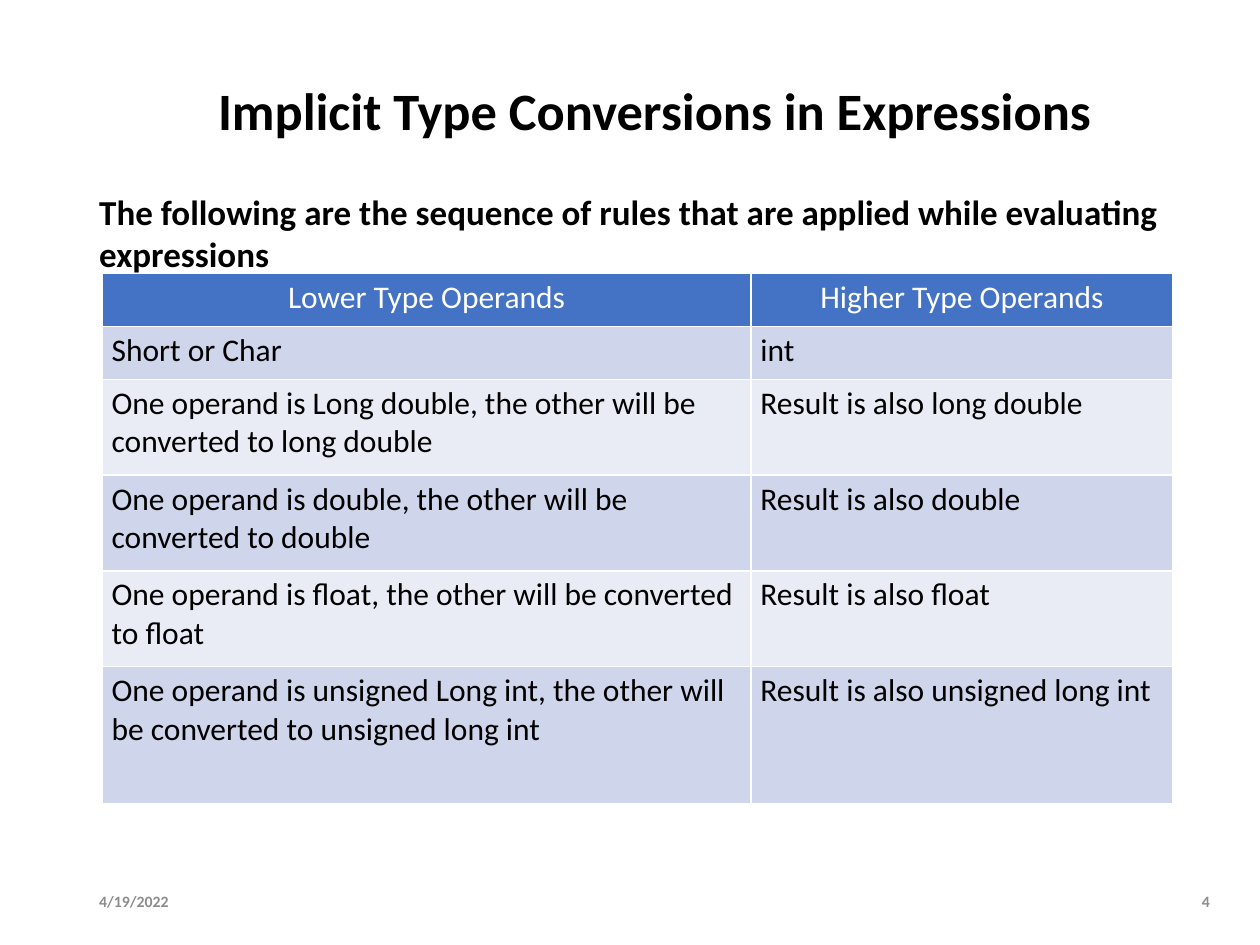
from pptx import Presentation
from pptx.dml.color import RGBColor
from pptx.enum.text import MSO_ANCHOR, MSO_AUTO_SIZE, PP_ALIGN
from pptx.util import Cm, Pt

COLORS = {
    "text": "000000",
    "muted": "8C8C8C",
    "white": "FFFFFF",
    "header": "4472C4",
    "odd_row": "CFD5EA",
    "even_row": "E9EBF5",
}
HEADINGS = ("Lower Type Operands", "Higher Type Operands")
RULES = [
    ("Short or Char", "int"),
    ("One operand is Long double, the other will be converted to long double",
     "Result is also long double"),
    ("One operand is double, the other will be converted to double",
     "Result is also double"),
    ("One operand is float, the other will be converted to float",
     "Result is also float"),
    ("One operand is unsigned Long int, the other will be converted to unsigned long int",
     "Result is also unsigned long int"),
]
COLUMN_WIDTHS = (13.08, 8.51)
ROW_HEIGHTS = (1.07, 1.07, 1.93, 1.93, 1.93, 2.77)


class SlideBuilder:
    """Holds the text style and the current slide, and adds its elements."""

    def __init__(self, presentation, font_name="Calibri"):
        self.font_name = font_name
        self.slide = presentation.slides.add_slide(presentation.slide_layouts[5])

    def set_text(self, text_frame, text, size, color="text", bold=False, align=PP_ALIGN.LEFT):
        text_frame.text = text
        text_frame.word_wrap = True
        paragraph = text_frame.paragraphs[0]
        paragraph.alignment = align
        font = paragraph.runs[0].font
        font.name, font.size, font.bold = self.font_name, Pt(size), bold
        font.color.rgb = RGBColor.from_string(COLORS[color])
        return paragraph

    def title(self, text, left, top, width, height):
        title = self.slide.shapes.title
        title.left, title.top, title.width, title.height = map(Cm, (left, top, width, height))
        title.text_frame.vertical_anchor = MSO_ANCHOR.MIDDLE
        paragraph = self.set_text(title.text_frame, text, 30, bold=True, align=PP_ALIGN.CENTER)
        paragraph.line_spacing = 0.9

    def text(self, text, left, top, width, height, size, color="text",
             align=PP_ALIGN.LEFT, anchor=MSO_ANCHOR.TOP, auto_size=MSO_AUTO_SIZE.NONE):
        shape = self.slide.shapes.add_textbox(*map(Cm, (left, top, width, height)))
        text_frame = shape.text_frame
        text_frame.vertical_anchor = anchor
        text_frame.auto_size = auto_size
        self.set_text(text_frame, text, size, color, True, align)

    def footer(self, text, left, width, align):
        self.text(text, left, 17.65, width, 1.02, 9, "muted", align, MSO_ANCHOR.MIDDLE)

    def table(self, rows, left, top, column_widths, row_heights):
        frame = self.slide.shapes.add_table(
            len(rows), len(column_widths), Cm(left), Cm(top),
            Cm(sum(column_widths)), Cm(sum(row_heights)))
        table = frame.table
        for column, width in zip(table.columns, column_widths):
            column.width = Cm(width)
        for index, (row, height, texts) in enumerate(zip(table.rows, row_heights, rows)):
            row.height = Cm(height)
            for cell, text in zip(row.cells, texts):
                self.cell(cell, text, index)

    def cell(self, cell, text, row_index):
        cell.margin_left = cell.margin_right = Cm(0.19)
        cell.margin_top = cell.margin_bottom = Cm(0.1)
        cell.fill.solid()
        if row_index == 0:
            fill, color, align = "header", "white", PP_ALIGN.CENTER
        else:
            fill = "odd_row" if row_index % 2 else "even_row"
            color, align = "text", PP_ALIGN.LEFT
        cell.fill.fore_color.rgb = RGBColor.from_string(COLORS[fill])
        self.set_text(cell.text_frame, text, 18, color, align=align)


def main():
    presentation = Presentation()
    presentation.slide_width, presentation.slide_height = Cm(25.4), Cm(19.05)
    builder = SlideBuilder(presentation)
    builder.title("Implicit Type Conversions in Expressions", 1.75, 1.42, 22.91, 1.75)
    builder.table([HEADINGS, *RULES], 2.06, 5.51, COLUMN_WIDTHS, ROW_HEIGHTS)
    builder.footer("4/19/2022", 1.75, 2.41, PP_ALIGN.LEFT)
    builder.footer("4", 23.65, 0.99, PP_ALIGN.RIGHT)
    builder.text(
        "The following are the sequence of rules that are applied while evaluating expressions",
        1.75, 3.71, 22.58, 1.96, 20, auto_size=MSO_AUTO_SIZE.SHAPE_TO_FIT_TEXT)
    presentation.save("out.pptx")


if __name__ == "__main__":
    main()
